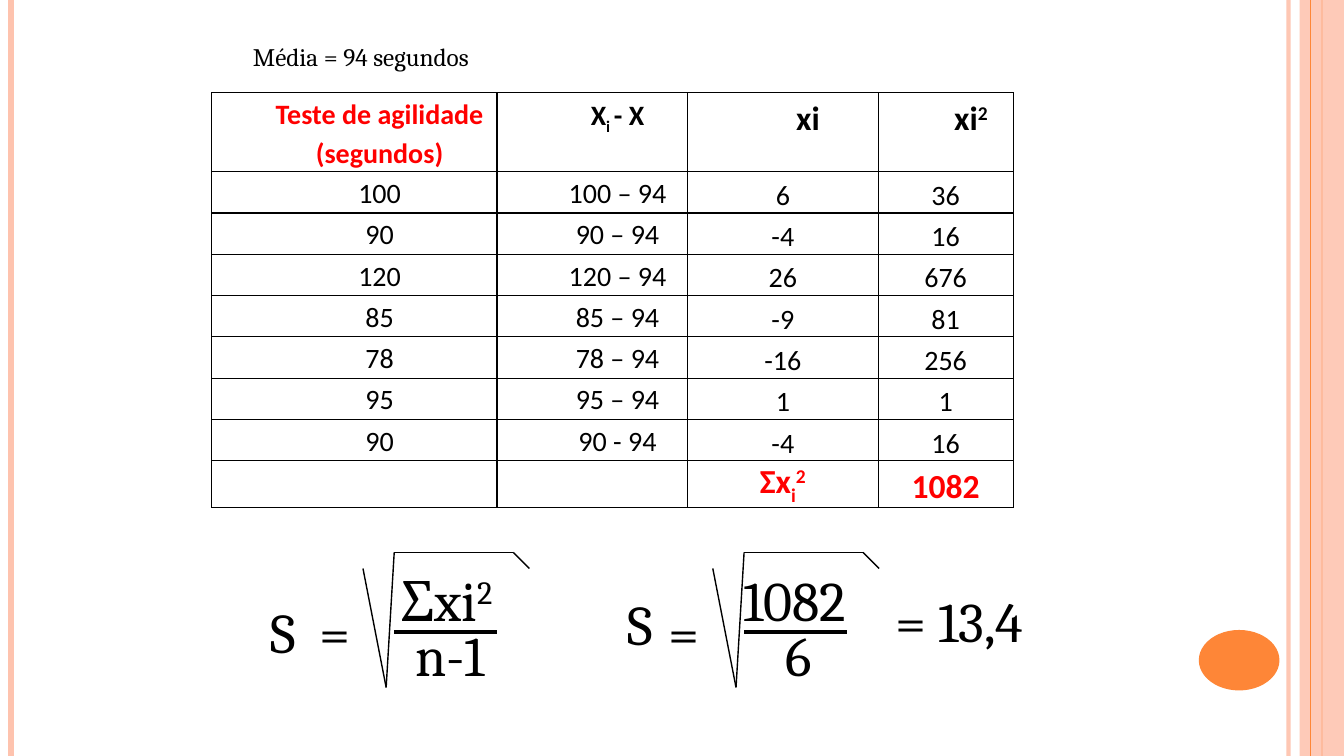
from dataclasses import dataclass

import pptx
import pptx.dml.color
import pptx.enum.shapes
import pptx.enum.text
import pptx.oxml
import pptx.oxml.ns
import pptx.util

PX = 9144  # 100 px to the inch
COLORS = {"black": "000000", "red": "FF0000", "orange": "FE8637", "peach": "FEC3AE"}
ALIGN = pptx.enum.text.PP_ALIGN
ANCHOR = pptx.enum.text.MSO_ANCHOR
SHAPE = pptx.enum.shapes.MSO_SHAPE
qn = pptx.oxml.ns.qn


@dataclass
class Run:
    text: str
    base: int = 0  # baseline shift in percent


@dataclass
class Style:
    size: int
    font: str = "Calibri"
    color: str = "black"
    bold: bool = False


@dataclass
class Label:
    runs: list[Run]
    x: int
    y: int
    w: int
    h: int
    size: int = 40
    term: bool = True  # centred part of a formula
    grow: bool = False
    wrap: bool = True


@dataclass
class Line:
    x1: int
    y1: int
    x2: int
    y2: int
    width: float = 1
    color: str = "black"
    alpha: int = 100


def px(n: int) -> int:
    return n * PX


def rgb(name: str) -> pptx.dml.color.RGBColor:
    return pptx.dml.color.RGBColor.from_string(COLORS[name])


def set_alpha(parent, percent: int) -> None:
    if percent < 100:
        clr = next(parent.iter(qn("a:srgbClr")))
        alpha = pptx.oxml.parse_xml(f'<a:alpha {pptx.oxml.ns.nsdecls("a")} val="{percent * 1000}"/>')
        clr.append(alpha)


def add_runs(p, runs: list[Run], style: Style) -> None:
    for run in runs:
        r = p.add_run()
        r.text = run.text
        r.font.size = pptx.util.Pt(style.size)
        r.font.name = style.font
        r.font.bold = style.bold
        r.font.color.rgb = rgb(style.color)
        if run.base:
            r._r.get_or_add_rPr().set("baseline", str(run.base * 1000))


def set_indent(p, left: int, first: int) -> None:
    pPr = p._p.get_or_add_pPr()
    pPr.set("marL", str(px(left)))
    pPr.set("indent", str(px(first)))


def draw_line(s, line: Line) -> None:
    ends = [px(n) for n in (line.x1, line.y1, line.x2, line.y2)]
    cxn = s.shapes.add_connector(pptx.enum.shapes.MSO_CONNECTOR.STRAIGHT, *ends)
    cxn.line.width = pptx.util.Pt(line.width)
    cxn.line.color.rgb = rgb(line.color)
    spPr = cxn._element.spPr
    set_alpha(spPr, line.alpha)
    spPr.append(pptx.oxml.parse_xml(f'<a:effectLst {pptx.oxml.ns.nsdecls("a")}/>'))


def draw_shape(s, kind, x: int, y: int, w: int, h: int, color: str, alpha: int = 100) -> None:
    sp = s.shapes.add_shape(kind, px(x), px(y), px(w), px(h))
    sp.shadow.inherit = False
    sp.fill.solid()
    sp.fill.fore_color.rgb = rgb(color)
    sp.line.fill.background()
    set_alpha(sp._element.spPr, alpha)


def draw_label(s, label: Label) -> None:
    sp = s.shapes.add_textbox(px(label.x), px(label.y), px(label.w), px(label.h))
    tf = sp.text_frame
    tf.word_wrap = label.wrap
    if label.grow:
        tf.auto_size = pptx.enum.text.MSO_AUTO_SIZE.SHAPE_TO_FIT_TEXT
    p = tf.paragraphs[0]
    if label.term:
        p.alignment = ALIGN.CENTER
        p.space_before = pptx.util.Pt(6)
        set_indent(p, 30, -30)
    add_runs(p, label.runs, Style(label.size, "Cambria"))


def draw_root(s, x: int) -> None:
    """Root sign with the fraction bar under it."""
    draw_line(s, Line(x + 31, 627, x + 133, 627, 2.25))
    points = [(x, 564), (x + 23, 682), (x + 31, 548), (x + 149, 548), (x + 165, 564)]
    for start, end in zip(points, points[1:]):
        draw_line(s, Line(*start, *end))


def set_borders(cell) -> None:
    tcPr = cell._tc.get_or_add_tcPr()
    for i, side in enumerate(("lnL", "lnR", "lnT", "lnB")):
        tcPr.insert(i, pptx.oxml.parse_xml(
            f'<a:{side} {pptx.oxml.ns.nsdecls("a")} w="12700"><a:solidFill>'
            f'<a:srgbClr val="{COLORS["black"]}"/></a:solidFill></a:{side}>'))


def fill_cell(cell, paragraphs: list[list[Run]], style: Style, indented: bool) -> None:
    cell.fill.background()
    set_borders(cell)
    if not paragraphs:
        return
    side, top = (7, 0) if indented else (1, 1)
    cell.margin_left = cell.margin_right = px(side)
    cell.margin_top, cell.margin_bottom = px(top), 0
    cell.vertical_anchor = ANCHOR.TOP if indented else ANCHOR.BOTTOM
    tf = cell.text_frame
    for i, runs in enumerate(paragraphs):
        p = tf.add_paragraph() if i else tf.paragraphs[0]
        p.alignment = ALIGN.CENTER
        if indented:
            p.line_spacing = 1.15
            set_indent(p, 50, 0)
        add_runs(p, runs, style)


def draw_table(s) -> None:
    header = [
        ([[Run("Teste de agilidade")], [Run("(segundos)")]], Style(20, color="red", bold=True)),
        ([[Run("X"), Run("i ", -25), Run("- X")]], Style(20, bold=True)),
        ([[Run("xi")]], Style(24, bold=True)),
        ([[Run("xi"), Run("2", 30)]], Style(24, bold=True)),
    ]
    data = [
        ("100", "100 – 94", "6", "36"), ("90", "90 – 94", "-4", "16"),
        ("120", "120 – 94", "26", "676"), ("85", "85 – 94", "-9", "81"),
        ("78", "78 – 94", "-16", "256"), ("95", "95 – 94", "1", "1"),
        ("90", "90 - 94", "-4", "16"),
    ]
    totals = [[], [], [[Run("Σx"), Run("i", -25), Run("2", 30)]], [[Run("1082")]]]
    body, total = Style(20), Style(24, color="red", bold=True)
    rows = [header]
    rows += [[([[Run(text)]], body) for text in values] for values in data]
    rows.append([(paragraphs, total) for paragraphs in totals])

    table = s.shapes.add_table(len(rows), 4, px(210), px(92), px(795), px(401)).table
    table.first_row = table.horz_banding = False
    for col, width in zip(table.columns, (283, 189, 189, 134)):
        col.width = px(width)
    for i, row in enumerate(rows):
        table.rows[i].height = px(41 if i else 70)
        for j, (paragraphs, style) in enumerate(row):
            fill_cell(table.cell(i, j), paragraphs, style, indented=i == 0 or j < 2)


def main() -> None:
    prs = pptx.Presentation()
    prs.slide_width, prs.slide_height = px(1333), px(750)
    s = prs.slides.add_slide(prs.slide_layouts[6])

    # Side decoration
    draw_line(s, Line(1278, 0, 1278, 750, 3, "peach", 93))
    draw_line(s, Line(11, 0, 11, 750, 4.5, "peach"))
    draw_line(s, Line(1311, 0, 1311, 750, 1.5, "orange"))
    draw_shape(s, SHAPE.RECTANGLE, 1289, 0, 44, 750, "peach", 87)
    draw_line(s, Line(1300, 0, 1300, 750, 0.75, "orange"))
    draw_shape(s, SHAPE.OVAL, 1189, 625, 80, 60, "orange")

    # Deviations from the mean
    draw_table(s)
    draw_label(s, Label([Run("Média = 94 segundos")], 241, 36, 265, 40, 18, False, True, False))

    # Standard deviation formulas
    for label in (
        Label([Run("S")], 218, 588, 126, 87),
        Label([Run("=")], 289, 588, 86, 63),
        Label([Run("Σxi"), Run("2 ", 30)], 344, 556, 205, 87),
        Label([Run("n-1")], 392, 611, 109, 87),
        Label([Run("S")], 572, 580, 126, 87),
        Label([Run("=")], 635, 588, 86, 63),
        Label([Run("1082")], 706, 556, 165, 87),
        Label([Run("6")], 738, 611, 109, 87),
        Label([Run("= 13,4")], 878, 577, 229, 145, term=False),
    ):
        draw_label(s, label)
    for x in (360, 707):
        draw_root(s, x)

    prs.save("out.pptx")


if __name__ == "__main__":
    main()
